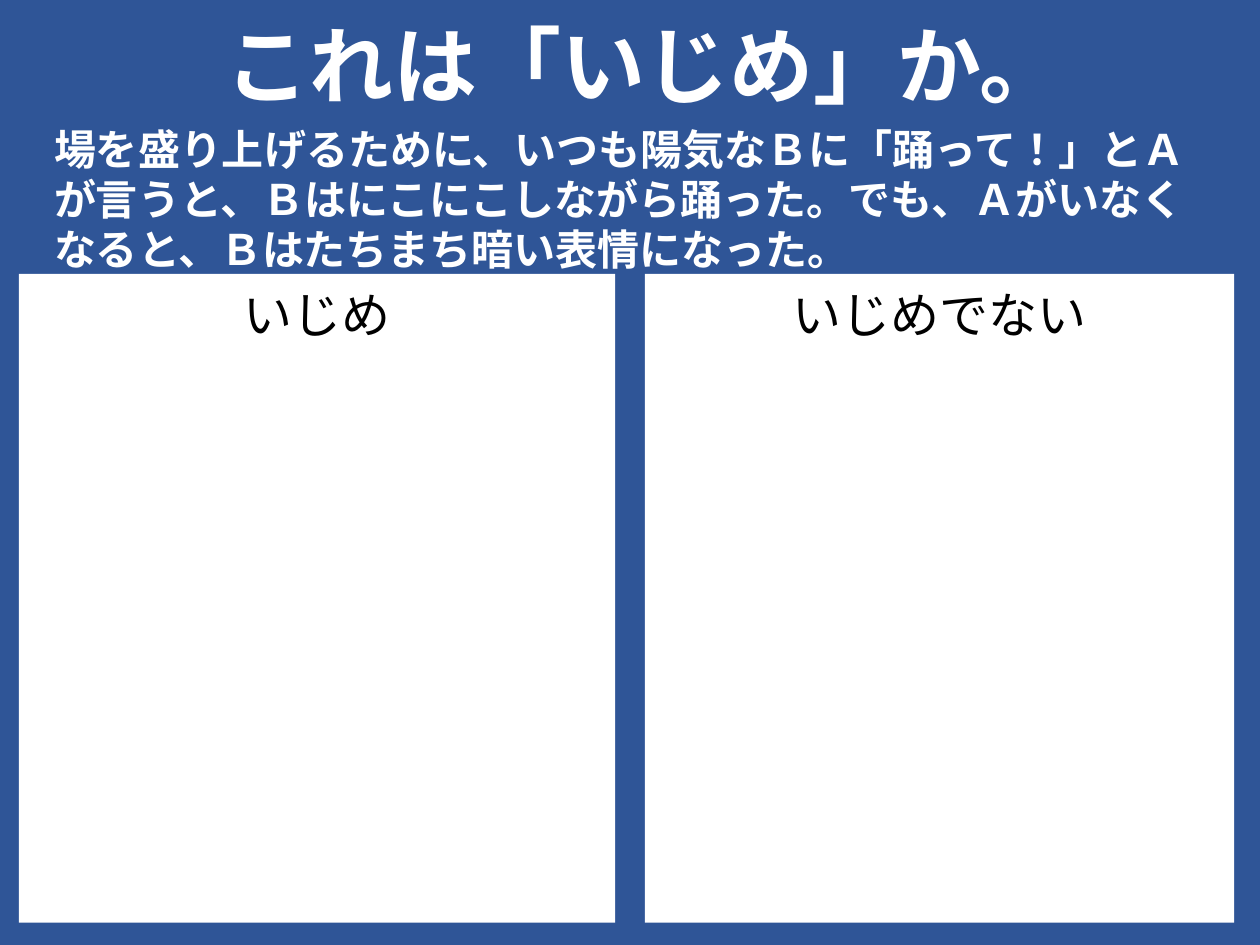
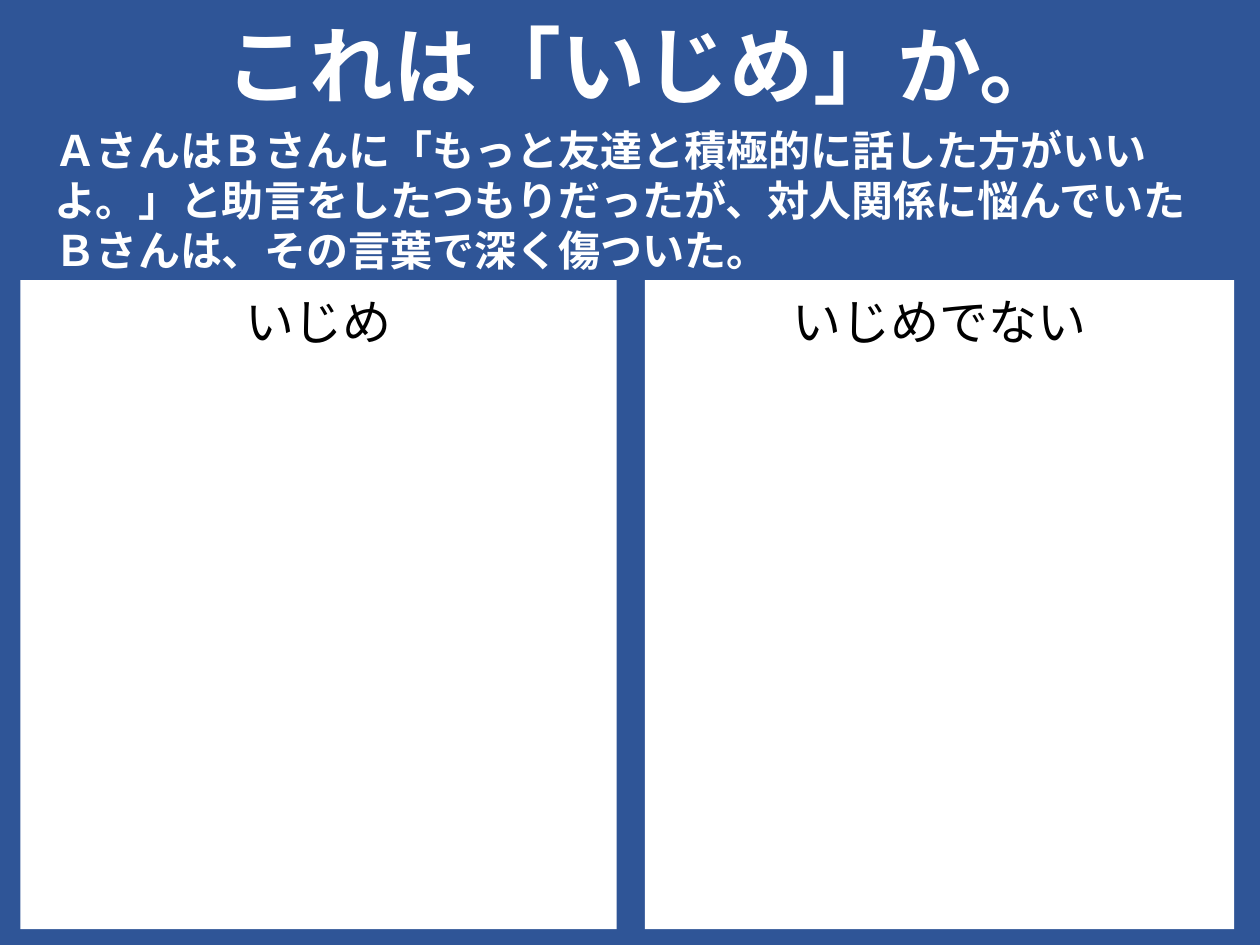
from dataclasses import dataclass

from lxml.etree import SubElement
from pptx import Presentation
from pptx.dml.color import RGBColor
from pptx.enum.lang import MSO_LANGUAGE_ID
from pptx.enum.shapes import MSO_SHAPE
from pptx.enum.text import MSO_ANCHOR, PP_ALIGN
from pptx.oxml.ns import qn
from pptx.util import Cm, Pt


@dataclass(frozen=True)
class Theme:
    background: RGBColor = RGBColor(0x2F, 0x55, 0x97)
    white: RGBColor = RGBColor(0xFF, 0xFF, 0xFF)
    black: RGBColor = RGBColor(0, 0, 0)
    latin_font: str = "Calibri"
    japanese_font: str = "Noto Sans CJK JP"
    title_size: int = 48
    heading_size: int = 28
    story_size: int = 24


theme = Theme()


def write(box, text, size, color, font=theme.latin_font, bold=False,
          align=PP_ALIGN.CENTER, spacing=1.29, inset=0.13):
    """Put one paragraph in a box; spacing is a multiple of the type size."""
    frame = box.text_frame
    frame.word_wrap = True
    frame.vertical_anchor = MSO_ANCHOR.TOP
    frame.margin_top = Cm(inset)
    para = frame.paragraphs[0]
    para.alignment = align
    para.line_spacing = Pt(round(size * spacing, 1))
    span = para.add_run()
    span.text = text
    span.font.size = Pt(size)
    span.font.bold = bold
    span.font.color.rgb = color
    span.font.name = font
    span.font.language_id = MSO_LANGUAGE_ID.JAPANESE
    east_asian = SubElement(span.font._element, qn("a:ea"))
    east_asian.set("typeface", theme.japanese_font)


# Each slide: story, top of the story, left edge of the first panel, top of the panels
stories = [
    ("場を盛り上げるために、いつも陽気なＢに「踊って！」とＡが言うと、"
     "Ｂはにこにこしながら踊った。でも、Ａがいなくなると、"
     "Ｂはたちまち暗い表情になった。", 2.29, 0.38, 5.52),
    ("ＡさんはＢさんに「もっと友達と積極的に話した方がいいよ。」と"
     "助言をしたつもりだったが、対人関係に悩んでいたＢさんは、"
     "その言葉で深く傷ついた。", 2.31, 0.41, 5.65),
]

deck = Presentation()
deck.slide_width = Cm(25.4)
deck.slide_height = Cm(19.05)

for story, story_top, first_left, panel_top in stories:
    page = deck.slides.add_slide(deck.slide_layouts[6])
    page.background.fill.solid()
    page.background.fill.fore_color.rgb = theme.background

    # Answer panels
    panels = [("いじめ", first_left, 12.02), ("いじめでない", 13, 11.88)]
    for heading, left, width in panels:
        panel = page.shapes.add_shape(
            MSO_SHAPE.RECTANGLE, Cm(left), Cm(panel_top), Cm(width), Cm(13.08))
        panel.shadow.inherit = False
        panel.fill.solid()
        panel.fill.fore_color.rgb = theme.white
        panel.line.fill.background()
        write(panel, heading, theme.heading_size, theme.black)

    # Title
    title = page.shapes.add_textbox(Cm(1.22), Cm(0), Cm(23.55), Cm(2.31))
    write(title, "これは「いじめ」か。", theme.title_size, theme.white, bold=True)

    # Story
    story_box = page.shapes.add_textbox(Cm(0.84), Cm(story_top), Cm(23.93), Cm(3.33))
    write(story_box, story, theme.story_size, theme.white, font=theme.japanese_font,
          bold=True, align=PP_ALIGN.LEFT, spacing=1.19, inset=0.21)

deck.save("out.pptx")
